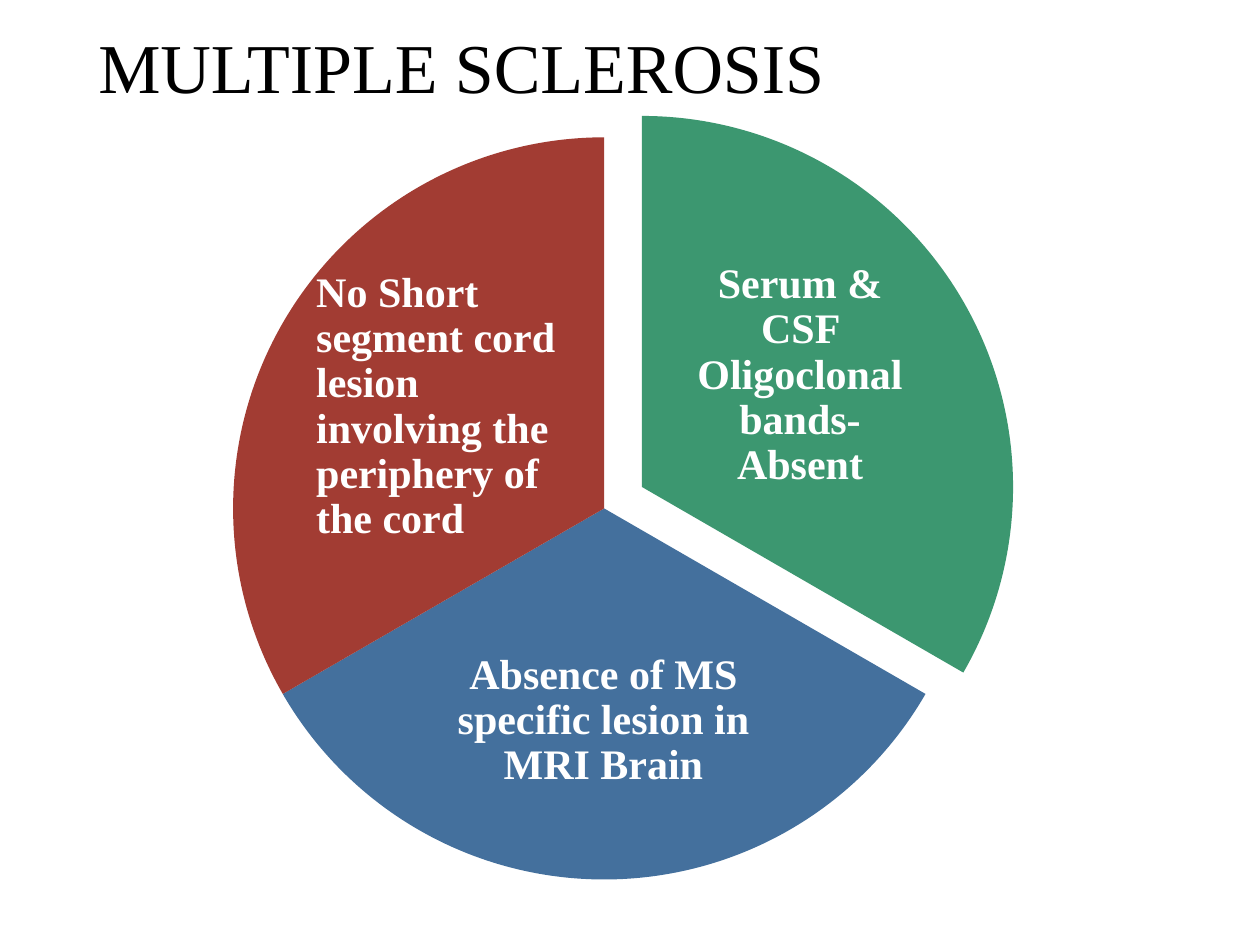
"""Build the multiple sclerosis slide: a three-part pie with one slice pulled out."""
import pptx
import pptx.dml.color
import pptx.enum.shapes
import pptx.enum.text
import pptx.util

ALIGN = pptx.enum.text.PP_ALIGN
THEME = {
    "font": "Times New Roman",
    "title_size": 40,
    "label_size": 24,
    "title": "000000",
    "label": "FFFFFF",
    "green": "3C9770",
    "blue": "44709D",
    "red": "A23C33",
}

deck = pptx.Presentation()
deck.slide_width = pptx.util.Inches(10)
deck.slide_height = pptx.util.Inches(7.5)
column = deck.slide_width / 100
row = deck.slide_height / 75
page = deck.slides.add_slide(deck.slide_layouts[5])


def place(left, top, width, height):
    return [round(left * column), round(top * row), round(width * column), round(height * row)]


def write(box, text, size, color, bold=False, align=ALIGN.LEFT, line=1.0, after=0, inset=0.3, indent=0.3):
    frame = box.text_frame
    frame.word_wrap = True
    frame.auto_size = pptx.enum.text.MSO_AUTO_SIZE.NONE
    frame.vertical_anchor = pptx.enum.text.MSO_ANCHOR.MIDDLE
    frame.margin_left = round(indent * column)
    frame.margin_right = round(inset * column)
    frame.margin_top = frame.margin_bottom = round(inset * row)
    para = frame.paragraphs[0]
    para.alignment = align
    para.line_spacing = line
    para.space_after = pptx.util.Pt(after)
    span = para.add_run()
    span.text = text
    span.font.name = THEME["font"]
    span.font.size = pptx.util.Pt(size)
    span.font.bold = bold
    span.font.color.rgb = pptx.dml.color.RGBColor.from_string(color)


title = page.shapes.title
title.left, title.top, title.width, title.height = place(1.2, -0.3, 77.2, 11)
write(title, "MULTIPLE SCLEROSIS", THEME["title_size"], THEME["title"], inset=0.5, indent=6.6)

diameter = 58.9
sweep = 120
home = (18.5, 10.9)
pulled = (21.5, 9.2)
slices = [
    ("green", pulled, (53.5, 20, 20, 19.6), ALIGN.CENTER, "Serum & CSF Oligoclonal bands- Absent"),
    ("blue", home, (34.6, 48.1, 26.6, 18.2), ALIGN.CENTER, "Absence of MS specific lesion in MRI Brain"),
    ("red", home, (24.8, 22.5, 20, 19.6), ALIGN.LEFT,
     "No Short segment cord lesion involving the periphery of the cord"),
]

for index, (color, corner, label_area, align, text) in enumerate(slices):
    start = (270 + index * sweep) % 360
    pie = page.shapes.add_shape(pptx.enum.shapes.MSO_SHAPE.PIE, *place(*corner, diameter, diameter))
    pie.adjustments[0] = start * 0.6
    pie.adjustments[1] = (start + sweep) % 360 * 0.6
    pie.shadow.inherit = False
    pie.fill.solid()
    pie.fill.fore_color.rgb = pptx.dml.color.RGBColor.from_string(THEME[color])
    pie.line.fill.background()
    label = page.shapes.add_textbox(*place(*label_area))
    write(label, text, THEME["label_size"], THEME["label"], bold=True, align=align, line=0.9, after=8.4)

deck.save("out.pptx")
